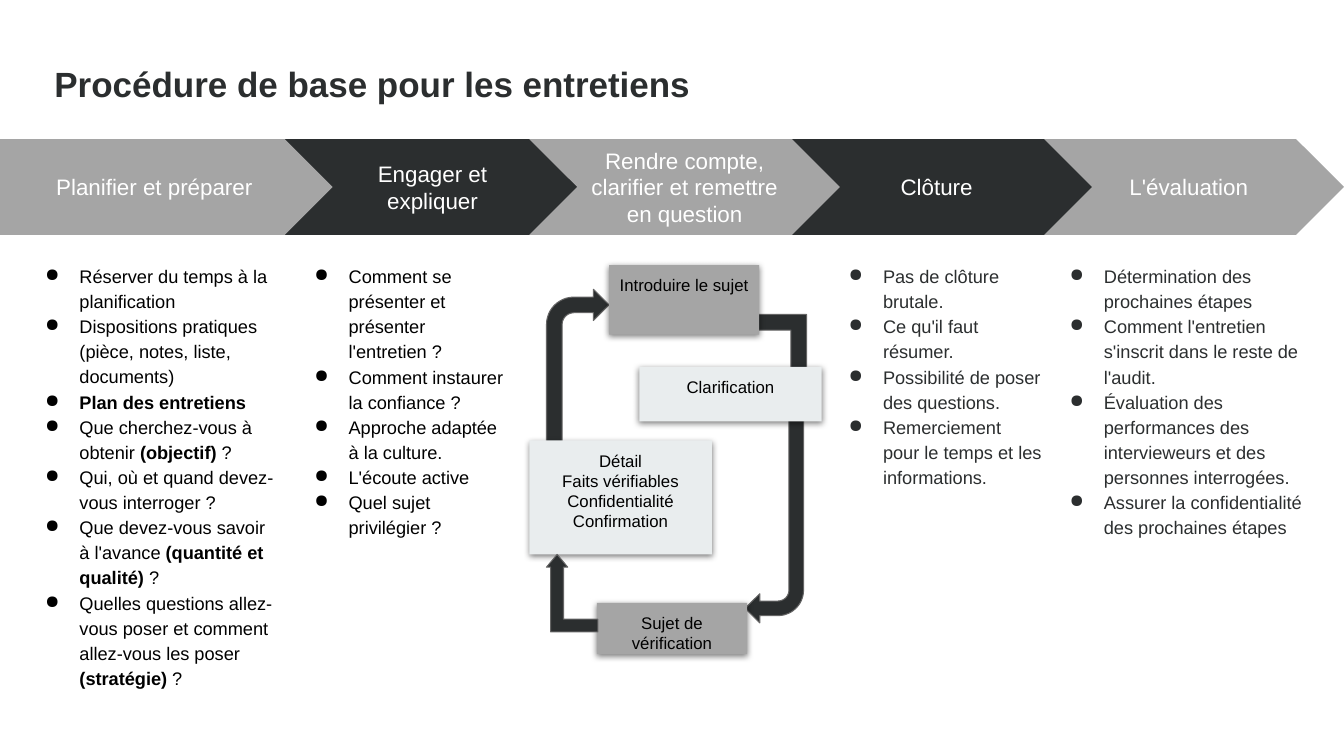
from lxml import etree
from pptx import Presentation
from pptx import util as u
from pptx.dml.color import RGBColor
from pptx.enum import shapes, text
from pptx.oxml import ns

DARK = RGBColor(0x2B, 0x2E, 0x2F)
GREY = RGBColor(0xA5, 0xA5, 0xA5)
PALE = RGBColor(0xE9, 0xED, 0xEE)
EDGE = RGBColor(0x65, 0x65, 0x65)
BLACK = RGBColor(0, 0, 0)
WHITE = RGBColor(255, 255, 255)
KIND = shapes.MSO_SHAPE
MID, TOP = text.MSO_ANCHOR.MIDDLE, text.MSO_ANCHOR.TOP
LEFT, CENTER = text.PP_ALIGN.LEFT, text.PP_ALIGN.CENTER

# Content; asterisks enclose bold words
TITLE = "Procédure de base pour les entretiens"
STEPS = [
    "Planifier et préparer",
    "Engager et expliquer",
    "Rendre compte, clarifier et remettre en question",
    "Clôture",
    "L'évaluation",
]
ORDER = [1, 0, 4, 3, 2]  # back to front
LISTS = [  # left, width, height, colour, items
    (0.19, 2.67, 2.34, BLACK, [
        "Réserver du temps à la planification",
        "Dispositions pratiques (pièce, notes, liste, documents)",
        "*Plan des entretiens*",
        "Que cherchez-vous à obtenir *(objectif) *?",
        "Qui, où et quand devez-vous interroger ?",
        "Que devez-vous savoir à l'avance *(quantité et qualité) *?",
        "Quelles questions allez-vous poser et comment "
        "allez-vous les poser *(stratégie) *?",
    ]),
    (2.86, 2.27, 3.31, BLACK, [
        "Comment se présenter et présenter l'entretien ?",
        "Comment instaurer la confiance ?",
        "Approche adaptée à la culture.",
        "L'écoute active",
        "Quel sujet privilégier ?",
    ]),
    (8.16, 2.27, 2.69, DARK, [
        "Pas de clôture brutale.",
        "Ce qu'il faut résumer.",
        "Possibilité de poser des questions.",
        "Remerciement pour le temps et les informations.",
    ]),
    (10.35, 2.89, 3.19, DARK, [
        "Détermination des prochaines étapes",
        "Comment l'entretien s'inscrit dans le reste de l'audit.",
        "Évaluation des performances des intervieweurs "
        "et des personnes interrogées.",
        "Assurer la confidentialité des prochaines étapes",
    ]),
]
BEND = (KIND.BENT_ARROW, [0.25, 0.25, 0.25, 0.438])
TURN = (KIND.BENT_UP_ARROW, [0.25, 0.207, 0.25])
ARROWS = [  # place, form, rotation, mirrored
    ((7.39, 4.06, 0.58, 2.12), BEND, 180, False),
    ((5.42, 2.87, 0.62, 1.61), BEND, 0, False),
    ((7.43, 3.12, 0.62, 0.79), TURN, 180, True),
]
LAST = ((5.42, 5.5, 0.51, 0.77), TURN, 0, True)
CARDS = [
    ((6.04, 2.63, 1.49, 0.69), GREY, ["Introduire le sujet"]),
    ((5.92, 5.98, 1.49, 0.51), GREY, ["Sujet de vérification"]),
    ((6.34, 3.64, 1.81, 0.54), PALE, ["Clarification"]),
    ((5.25, 4.37, 1.81, 1.13), PALE,
     ["Détail", "Faits vérifiables", "Confidentialité", "Confirmation"]),
]

deck = Presentation()
deck.slide_width, deck.slide_height = u.Inches(13.33), u.Inches(7.5)
slide = deck.slides.add_slide(deck.slide_layouts[6])


def place(box):
    return [u.Inches(v) for v in box]


def write(shape, lines, size, color, align=LEFT, anchor=TOP, pad=0.1, space=None):
    frame = shape.text_frame
    frame.word_wrap = True
    frame.vertical_anchor = anchor
    frame.margin_left = frame.margin_right = u.Inches(pad)
    frame.margin_top = frame.margin_bottom = u.Inches(pad)
    for i, line in enumerate(lines):
        para = frame.add_paragraph() if i else frame.paragraphs[0]
        para.alignment = align
        para.line_spacing = space
        para.font.size = u.Pt(size)
        para.font.name = "Arial"
        para.font.color.rgb = color
        for j, part in enumerate(line.split("*")):
            if part:
                run = para.add_run()
                run.text = part
                if j % 2:
                    run.font.bold = True
    return frame.paragraphs


def draw(kind, box, fill, line=None):
    shape = slide.shapes.add_shape(kind, *place(box))
    shape.shadow.inherit = False
    shape.fill.solid()
    shape.fill.fore_color.rgb = fill
    if line is None:
        shape.line.fill.background()
    else:
        shape.line.color.rgb = line
        shape.line.width = u.Pt(0.75)
    return shape


def shade(shape):
    effects = shape._element.spPr.find(ns.qn("a:effectLst"))
    cast = etree.SubElement(effects, ns.qn("a:outerShdw"), blurRad=str(u.Pt(4.5)),
                            dist=str(u.Pt(1.5)), dir="5400000", rotWithShape="0")
    tint = etree.SubElement(cast, ns.qn("a:srgbClr"), val=str(BLACK))
    etree.SubElement(tint, ns.qn("a:alpha"), val="49000")


def dot(para, color):
    props = para._p.get_or_add_pPr()
    props.set("marL", str(u.Inches(0.5)))
    props.set("indent", str(u.Inches(-0.34)))
    mark = etree.Element(ns.qn("a:buClr"))
    etree.SubElement(mark, ns.qn("a:srgbClr"), val=str(color))
    char = etree.Element(ns.qn("a:buChar"), char="●")
    font = props.find(ns.qn("a:defRPr"))
    for item in (mark, char):
        if font is None:
            props.append(item)
        else:
            font.addprevious(item)


def bend(box, form, turn, flip):
    kind, ratios = form
    arrow = draw(kind, box, DARK, EDGE)
    for i, ratio in enumerate(ratios):
        arrow.adjustments[i] = ratio
    arrow.rotation = turn
    if flip:
        arrow._element.spPr.find(ns.qn("a:xfrm")).set("flipH", "1")


# Title
head = slide.shapes.add_textbox(*place((0.54, 0.54, 6.7, 0.66)))
write(head, ["*" + TITLE + "*"], 25, DARK, pad=0, space=1.2)

# Band of steps
for i in ORDER:
    kind = KIND.CHEVRON if i else KIND.PENTAGON
    left, wide = (0.25 + 2.5 * i, 3.08) if i else (0, 3.3)
    step = draw(kind, (left, 1.38, wide, 0.95), DARK if i % 2 else GREY)
    step.adjustments[0] = 0.5
    write(step, [STEPS[i]], 16, WHITE, CENTER, MID)

# Cycle of the interview
for arrow in ARROWS:
    bend(*arrow)
for box, fill, lines in CARDS:
    card = draw(KIND.RECTANGLE, box, fill)
    shade(card)
    write(card, lines, 12, BLACK, CENTER)
bend(*LAST)

# Bulleted columns
for left, wide, high, color, items in LISTS:
    column = slide.shapes.add_textbox(*place((left, 2.5, wide, high)))
    for para in write(column, items, 13, color, space=1.15):
        dot(para, color)

deck.save("out.pptx")
